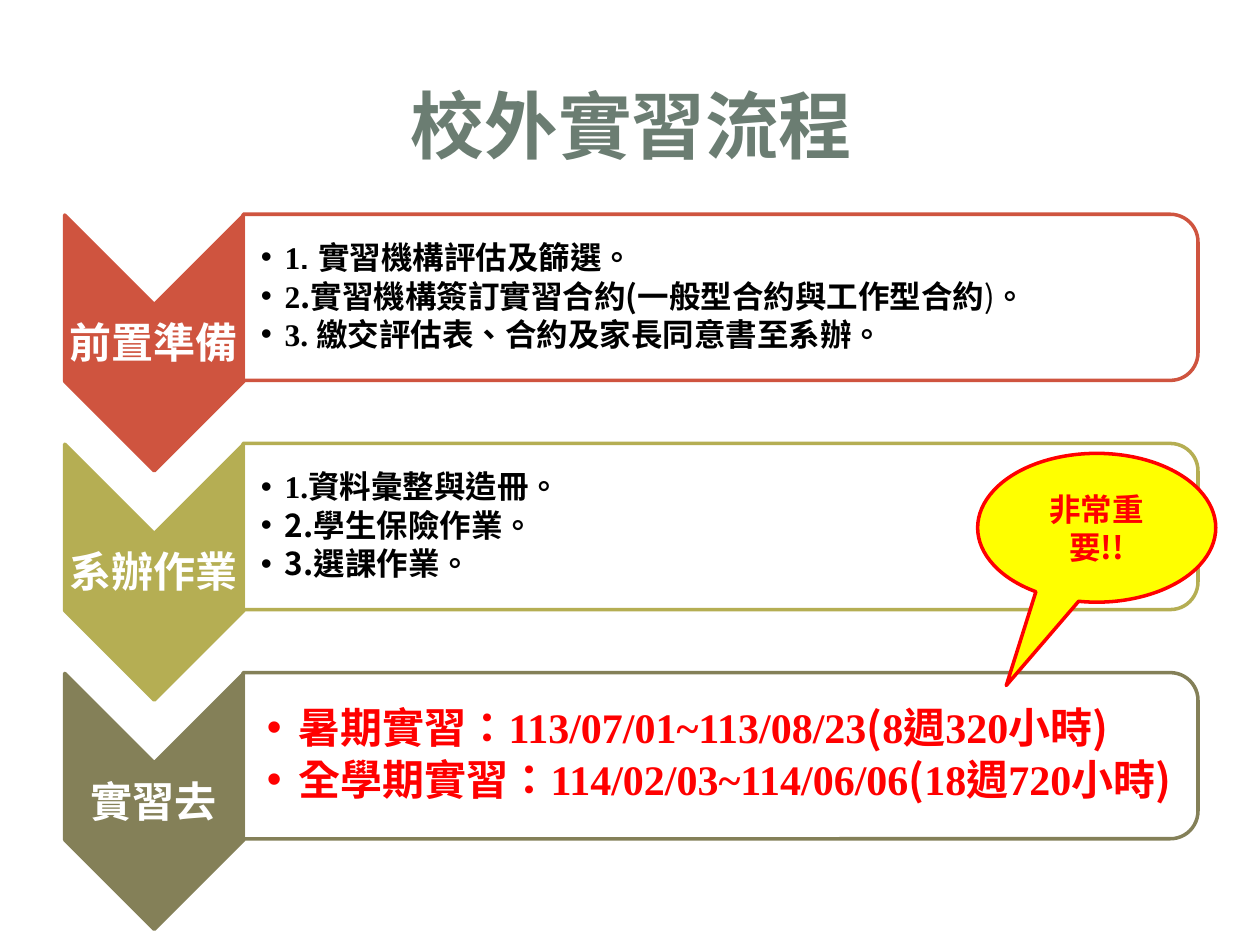
from lxml.etree import SubElement as Sub
from pptx import Presentation as Deck
from pptx.dml.color import RGBColor as Rgb
from pptx.enum.shapes import MSO_SHAPE as Kind
from pptx.enum.text import MSO_ANCHOR as Anchor, MSO_AUTO_SIZE as Auto, PP_ALIGN as Align
from pptx.oxml.ns import qn
from pptx.util import Cm, Pt

CJK, TIMES, GOTHIC = "Noto Sans CJK SC", "Times New Roman", "TeX Gyre Adventor"
STEP = 4.62  # distance between the stages, in cm
RED, WHITE, BLACK = "FF0000", "FFFFFF", "000000"

SMALL = dict(size=18, color=BLACK, hang=0.48, line=18.6, after=3.4, pad=0.36)
LARGE = dict(size=24, color=RED, hang=0.64, line=24.6, after=5, pad=0.48)


def term(date, weeks, hours):
    """Runs for a period with its weeks and hours."""
    return [(date, TIMES), ("(", CJK), (weeks, TIMES), ("週", CJK),
            (hours, TIMES), ("小時)", CJK)]


# Stage: name, colour, list style, list items as runs of (text, font[, bold])
STAGES = [
    ("前置準備", "CF543F", SMALL, [
        [("1", TIMES), (". ", GOTHIC), ("實習機構評估及篩選。", CJK)],
        [("2", TIMES), (".實習機構簽訂實習合約(一般型合約與工作型合約", CJK),
         (")", CJK, False), ("。", CJK)],
        [("3. ", TIMES), ("繳交評估表、合約及家長同意書至系辦。", CJK)]]),
    ("系辦作業", "B5AE53", SMALL, [
        [("1.", TIMES), ("資料彙整與造冊。", CJK)],
        [("2.學生保險作業。", CJK)],
        [("3.選課作業。", CJK)]]),
    ("實習去", "848058", LARGE, [
        [("暑期實習：", CJK)] + term("113/07/01~113/08/23", "8", "320"),
        [("全學期實習：", CJK)] + term("114/02/03~114/06/06", "18", "720")]),
]


def rgb(code):
    return Rgb.from_string(code)


def apply(item, vals):
    for name, val in vals.items():
        setattr(item, name, val)


def place(shape, box):
    names = ("left", "top", "width", "height")
    apply(shape, {name: Cm(val) for name, val in zip(names, box)})


def write(para, text, size, color, face=CJK, bold=True):
    run = para.add_run()
    run.text = text
    apply(run.font, dict(size=Pt(size), bold=bold, name=face))
    run.font.color.rgb = rgb(color)
    # East Asian face and regional punctuation
    props = run._r.get_or_add_rPr()
    props.set("lang", "zh-TW")
    Sub(props, qn("a:ea"), typeface=CJK)


def set_frame(frame, left=0.05, pad=0.05):
    apply(frame, dict(word_wrap=True, auto_size=Auto.NONE,
                      vertical_anchor=Anchor.MIDDLE, margin_left=Cm(left),
                      margin_right=Cm(pad), margin_top=Cm(pad), margin_bottom=Cm(pad)))


def add_shape(slide, kind, box, fill, line, turn=0, alpha=None):
    shape = slide.shapes.add_shape(kind, *map(Cm, box))
    shape.shadow.inherit = False
    shape.rotation = turn
    shape.fill.solid()
    shape.fill.fore_color.rgb = rgb(fill)
    if alpha:
        tint = shape.fill._xPr.find(qn("a:solidFill"))[0]
        Sub(tint, qn("a:alpha"), val=str(alpha * 1000))
    shape.line.color.rgb = rgb(line)
    shape.line.width = Pt(2)
    return shape


def add_label(slide, box, text):
    frame = slide.shapes.add_textbox(*map(Cm, box)).text_frame
    set_frame(frame)
    para = frame.paragraphs[0]
    para.alignment = Align.CENTER
    write(para, text, 24, WHITE)


def fill_list(slide, body, box, items, style):
    slide.shapes._spTree.append(body._element)  # in front of its frame
    place(body, box)
    frame = body.text_frame
    set_frame(frame, left=style["pad"], pad=0.03)
    for num, runs in enumerate(items):
        para = frame.add_paragraph() if num else frame.paragraphs[0]
        apply(para, dict(alignment=Align.LEFT, line_spacing=Pt(style["line"]),
                         space_before=Pt(0), space_after=Pt(style["after"])))
        props = para._p.get_or_add_pPr()
        props.set("marL", str(Cm(style["hang"])))
        props.set("indent", str(-Cm(style["hang"])))
        Sub(props, qn("a:buChar"), char="•")
        for text, *look in runs:
            write(para, text, style["size"], style["color"], *look)


def add_stage(slide, body, num, stage):
    name, color, style, items = stage
    drop = num * STEP
    add_shape(slide, Kind.CHEVRON, (0.53, 5.11 + drop, 5.16, 3.61), color, color, 90)
    add_label(slide, (1.3, 6.12 + drop, 3.61, 1.55), name)
    add_shape(slide, Kind.ROUND_2_SAME_RECTANGLE, (12.85, -3.63 + drop, 3.35, 19.25),
              WHITE, color, 90, alpha=90)
    fill_list(slide, body, (4.9, 4.5 + drop, 19.1, 3.02), items, style)


def add_title(slide, text):
    title = slide.shapes.title
    place(title, (1.3, 1.32, 22.86, 2.36))
    set_frame(title.text_frame)
    para = title.text_frame.paragraphs[0]
    para.alignment = Align.CENTER
    write(para, text, 42, "6B7D72")


def add_note(slide, text):
    note = add_shape(slide, Kind.OVAL_CALLOUT, (19.71, 9.14, 4.8, 3), "FFFF00", RED)
    note.adjustments[0], note.adjustments[1] = -0.38, 1.06
    set_frame(note.text_frame, left=0.25, pad=0.25)
    para = note.text_frame.paragraphs[0]
    apply(para, dict(alignment=Align.CENTER, line_spacing=Pt(22)))
    write(para, text, 18, RED)


def main():
    deck = Deck()
    deck.slide_width, deck.slide_height = Cm(25.4), Cm(19.05)
    slide = deck.slides.add_slide(deck.slide_layouts[4])  # title and four bodies
    _, *bodies, spare = slide.placeholders
    spare._element.getparent().remove(spare._element)

    add_title(slide, "校外實習流程")
    for num, (body, stage) in enumerate(zip(bodies, STAGES)):
        add_stage(slide, body, num, stage)
    add_note(slide, "非常重要!!")
    deck.save("out.pptx")


if __name__ == "__main__":
    main()
